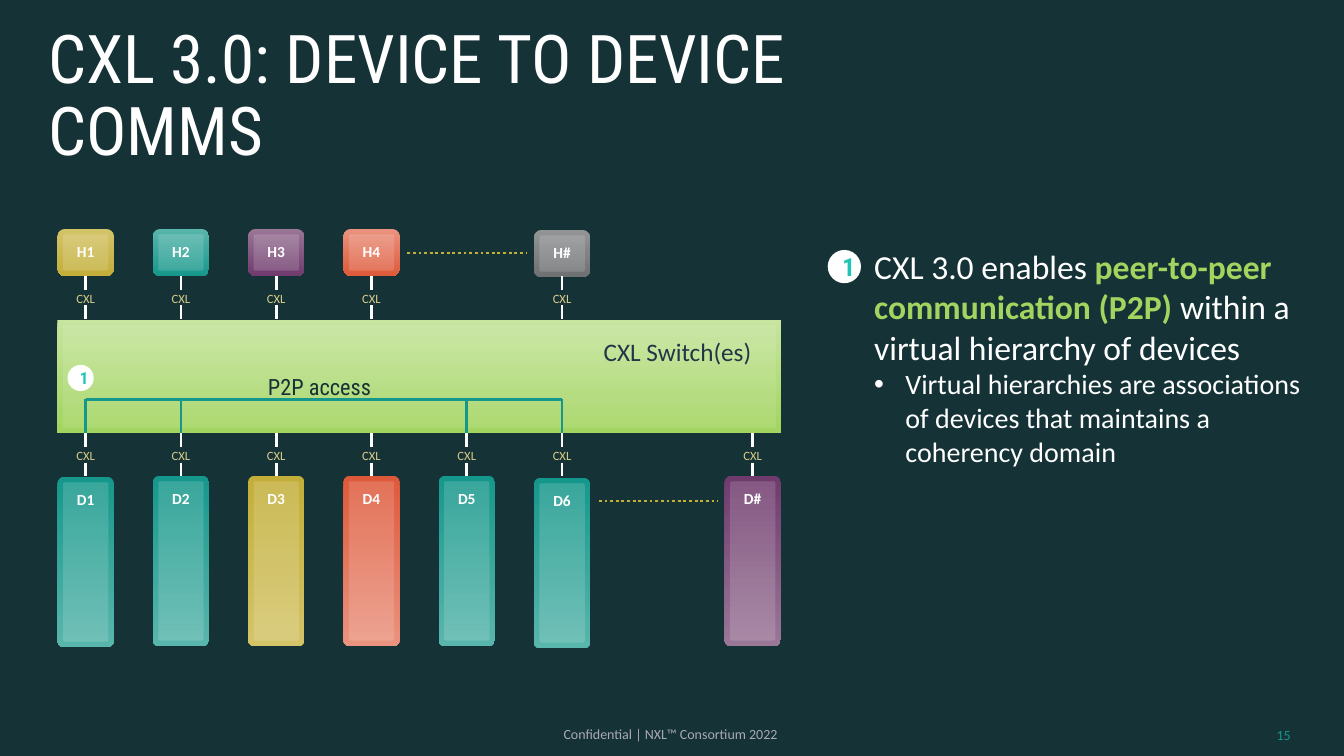
from dataclasses import dataclass

from lxml.etree import SubElement
from pptx import Presentation
from pptx.dml.color import RGBColor
from pptx.enum.dml import MSO_LINE
from pptx.enum.shapes import MSO_CONNECTOR, MSO_SHAPE
from pptx.enum.text import MSO_ANCHOR, MSO_AUTO_SIZE, PP_ALIGN
from pptx.oxml.ns import qn
from pptx.shapes.autoshape import Shape
from pptx.slide import Slide
from pptx.text.text import TextFrame
from pptx.util import Inches, Pt

NIGHT = RGBColor(0x15, 0x32, 0x36)
NAVY = RGBColor(0x22, 0x36, 0x47)
WHITE = RGBColor(0xFF, 0xFF, 0xFF)
SAND = RGBColor(0xDA, 0xCD, 0x88)
MIST = RGBColor(0xAA, 0xAA, 0xB6)
AQUA = RGBColor(0x1D, 0xC5, 0xB5)
LIME = RGBColor(0xA2, 0xD4, 0x5F)
PALE_LIME = RGBColor(0xC7, 0xE5, 0x9F)
TEAL = RGBColor(0x16, 0x97, 0x8B)
PALE_TEAL = RGBColor(0x59, 0xB6, 0xAC)
GOLD = RGBColor(0xC2, 0xAE, 0x38)
PALE_GOLD = RGBColor(0xD3, 0xC4, 0x68)
PLUM = RGBColor(0x6F, 0x3B, 0x6D)
PALE_PLUM = RGBColor(0x9A, 0x76, 0x97)
CORAL = RGBColor(0xDE, 0x59, 0x3A)
PALE_CORAL = RGBColor(0xEA, 0x93, 0x7F)
GREY = RGBColor(0x6F, 0x70, 0x72)
PALE_GREY = RGBColor(0x93, 0x94, 0x96)

SANS = "Calibri"
NARROW = "Roboto Condensed"
LEFT, PITCH, WIDTH = 0.57, 0.945, 0.56
HOST_TOP, HOST_HIGH = 2.27, 0.47
DEV_TOP, DEV_HIGH = 4.72, 1.69
SWITCH_TOP, SWITCH_END = 3.17, 4.3
BUS_TOP = 3.96


@dataclass
class Node:
    name: str
    col: int
    pale: RGBColor
    deep: RGBColor
    drop: float = 0


HOSTS = [
    Node("H1", 0, PALE_GOLD, GOLD),
    Node("H2", 1, PALE_TEAL, TEAL),
    Node("H3", 2, PALE_PLUM, PLUM),
    Node("H4", 3, PALE_CORAL, CORAL),
    Node("H#", 5, PALE_GREY, GREY, 0.01),
]
DEVICES = [
    Node("D1", 0, PALE_TEAL, TEAL, 0.01),
    Node("D2", 1, PALE_TEAL, TEAL),
    Node("D3", 2, PALE_GOLD, GOLD),
    Node("D4", 3, PALE_CORAL, CORAL),
    Node("D5", 4, PALE_TEAL, TEAL),
    Node("D6", 5, PALE_TEAL, TEAL, 0.02),
    Node("D#", 7, PALE_PLUM, PLUM),
]
PEERS = [0, 1, 4, 5]


def col_left(col: int) -> float:
    return LEFT + PITCH * col


def col_mid(col: int) -> float:
    return col_left(col) + WIDTH / 2


def set_text(frame: TextFrame, text: str, size: float, color: RGBColor, font: str = SANS,
             bold: bool = False, align: PP_ALIGN = PP_ALIGN.CENTER, space: float = 0.85) -> None:
    frame.word_wrap = True
    para = frame.paragraphs[0]
    para.text = text
    para.alignment = align
    para.line_spacing = space
    para.font.size = Pt(size)
    para.font.name = font
    para.font.bold = bold
    para.font.color.rgb = color


def add_label(slide: Slide, left: float, top: float, width: float, high: float,
              text: str, size: float, color: RGBColor, **style) -> TextFrame:
    box = slide.shapes.add_textbox(Inches(left), Inches(top), Inches(width), Inches(high))
    set_text(box.text_frame, text, size, color, **style)
    return box.text_frame


def add_plain(slide: Slide, kind: MSO_SHAPE, left: float, top: float,
              width: float, high: float) -> Shape:
    """Add a shape with no shadow or outline, filled white."""
    shape = slide.shapes.add_shape(kind, Inches(left), Inches(top), Inches(width), Inches(high))
    shape.shadow.inherit = False
    shape.line.fill.background()
    shape.fill.solid()
    shape.fill.fore_color.rgb = WHITE
    return shape


def add_panel(slide: Slide, kind: MSO_SHAPE, left: float, top: float, width: float,
              high: float, first: RGBColor, last: RGBColor, glow: int) -> tuple[Shape, Shape]:
    """Add a top-to-bottom gradient shape and a sheer white inset."""
    plate = add_plain(slide, kind, left, top, width, high)
    plate.fill.gradient()
    plate.fill.gradient_angle = 270
    for stop, color in zip(plate.fill.gradient_stops, (first, last)):
        stop.color.rgb = color
    edge = 0.055
    sheen = add_plain(slide, kind, left + edge, top + edge, width - 2 * edge, high - 2 * edge)
    tint = sheen.element.spPr.find(f".//{qn('a:srgbClr')}")
    SubElement(tint, qn("a:alpha"), val=str(glow * 1000))
    return plate, sheen


def add_node(slide: Slide, node: Node, top: float, high: float, host: bool) -> None:
    left, top = col_left(node.col), top + node.drop
    first, last = (node.pale, node.deep) if host else (node.deep, node.pale)
    plate, sheen = add_panel(slide, MSO_SHAPE.ROUNDED_RECTANGLE, left, top, WIDTH, high,
                             first, last, 15)
    plate.adjustments[0] = 0.167 if host else 0.115
    sheen.adjustments[0] = 0.043
    add_label(slide, left, top + 0.115, WIDTH, 0.26, node.name, 11, WHITE, bold=True)


def add_line(slide: Slide, x1: float, y1: float, x2: float, y2: float,
             color: RGBColor, dotted: bool = False) -> None:
    line = slide.shapes.add_connector(MSO_CONNECTOR.STRAIGHT, Inches(x1), Inches(y1),
                                      Inches(x2), Inches(y2))
    line.line.width = Pt(2)
    line.line.color.rgb = color
    if dotted:
        line.line.dash_style = MSO_LINE.ROUND_DOT
    SubElement(line.element.spPr, qn("a:effectLst"))


def add_link(slide: Slide, col: int, top: float) -> None:
    mid = col_mid(col)
    for start in (top, top + 0.29):
        add_line(slide, mid, start, mid, start + 0.135, WHITE)
    add_label(slide, col_left(col), top + 0.115, WIDTH, 0.23, "CXL", 9, SAND)


def add_badge(slide: Slide, left: float, top: float, size: float, points: int) -> None:
    disc = add_plain(slide, MSO_SHAPE.OVAL, left, top, size, size)
    set_text(disc.text_frame, "1", points, AQUA, font=NARROW, bold=True, space=1)


def fill_title(slide: Slide) -> None:
    title = slide.shapes.title
    title.left, title.top, title.width, title.height = map(Inches, (0.38, 0.2, 9.32, 0.62))
    frame = title.text_frame
    frame.auto_size = MSO_AUTO_SIZE.NONE
    frame.vertical_anchor = MSO_ANCHOR.TOP
    set_text(frame, "CXL 3.0: DEVICE TO DEVICE COMMS", 48, WHITE, font=NARROW,
             align=PP_ALIGN.LEFT, space=0.9)


def fill_body(slide: Slide) -> None:
    body = slide.placeholders[1]
    body.left, body.top, body.width, body.height = map(Inches, (8.57, 2.39, 4.64, 2.73))
    frame = body.text_frame
    frame.auto_size = MSO_AUTO_SIZE.NONE
    set_text(frame, "CXL 3.0 enables ", 24, WHITE, align=PP_ALIGN.LEFT, space=1)
    lead, point = frame.paragraphs[0], frame.add_paragraph()
    peer = lead.add_run()
    peer.text = "peer-to-peer communication (P2P) "
    peer.font.bold = True
    peer.font.color.rgb = LIME
    lead.add_run().text = "within a virtual hierarchy of devices"
    point.text = "Virtual hierarchies are associations of devices that maintains a coherency domain"
    point.font.size = Pt(20)
    point.font.name = SANS
    point.font.color.rgb = WHITE
    for para, indent, mark in ((lead, 0, None), (point, 0.31, "•")):
        para.space_before = Pt(0)
        props = para._p.get_or_add_pPr()
        props.set("marL", str(Inches(indent)))
        props.set("indent", str(-Inches(indent)))
        bullet = props.makeelement(qn("a:buChar"), char=mark) if mark else props.makeelement(qn("a:buNone"))
        props.find(qn("a:defRPr")).addprevious(bullet)


def main() -> None:
    deck = Presentation()
    deck.slide_width, deck.slide_height = Inches(13.33), Inches(7.5)
    slide = deck.slides.add_slide(deck.slide_layouts[1])
    slide.background.fill.solid()
    slide.background.fill.fore_color.rgb = NIGHT
    fill_title(slide)
    fill_body(slide)
    add_badge(slide, 8.21, 2.48, 0.33, 18)

    add_panel(slide, MSO_SHAPE.RECTANGLE, LEFT, SWITCH_TOP, 7.18, SWITCH_END - SWITCH_TOP,
              PALE_LIME, LIME, 10)
    add_label(slide, 5.71, 3.33, 2.02, 0.36, "CXL Switch(es)", 18, NAVY)
    for host in HOSTS:
        add_node(slide, host, HOST_TOP, HOST_HIGH, True)
        add_link(slide, host.col, HOST_TOP + HOST_HIGH)
    for device in DEVICES:
        add_link(slide, device.col, SWITCH_END)
        add_node(slide, device, DEV_TOP, DEV_HIGH, False)
    add_line(slide, 4.04, 2.51, 5.23, 2.51, GOLD, dotted=True)
    add_line(slide, 5.94, 4.97, 7.12, 4.97, GOLD, dotted=True)

    for col in PEERS:
        add_line(slide, col_mid(col), SWITCH_END, col_mid(col), BUS_TOP, TEAL)
    add_line(slide, col_mid(PEERS[0]), BUS_TOP, col_mid(PEERS[-1]), BUS_TOP, TEAL)
    add_badge(slide, 0.67, 3.62, 0.26, 12)
    add_label(slide, 2.56, 3.69, 1.87, 0.34, "P2P access", 16, NIGHT, font=NARROW,
              align=PP_ALIGN.LEFT)

    foot = add_label(slide, 2.93, 7.15, 7.44, 0.26, "Confidential | NXL™ Consortium 2022",
                     10, MIST, space=1)
    page = add_label(slide, 12.23, 7.09, 0.67, 0.4, "15", 10, TEAL, align=PP_ALIGN.RIGHT, space=1)
    foot.vertical_anchor = page.vertical_anchor = MSO_ANCHOR.MIDDLE
    deck.save("out.pptx")


if __name__ == "__main__":
    main()
